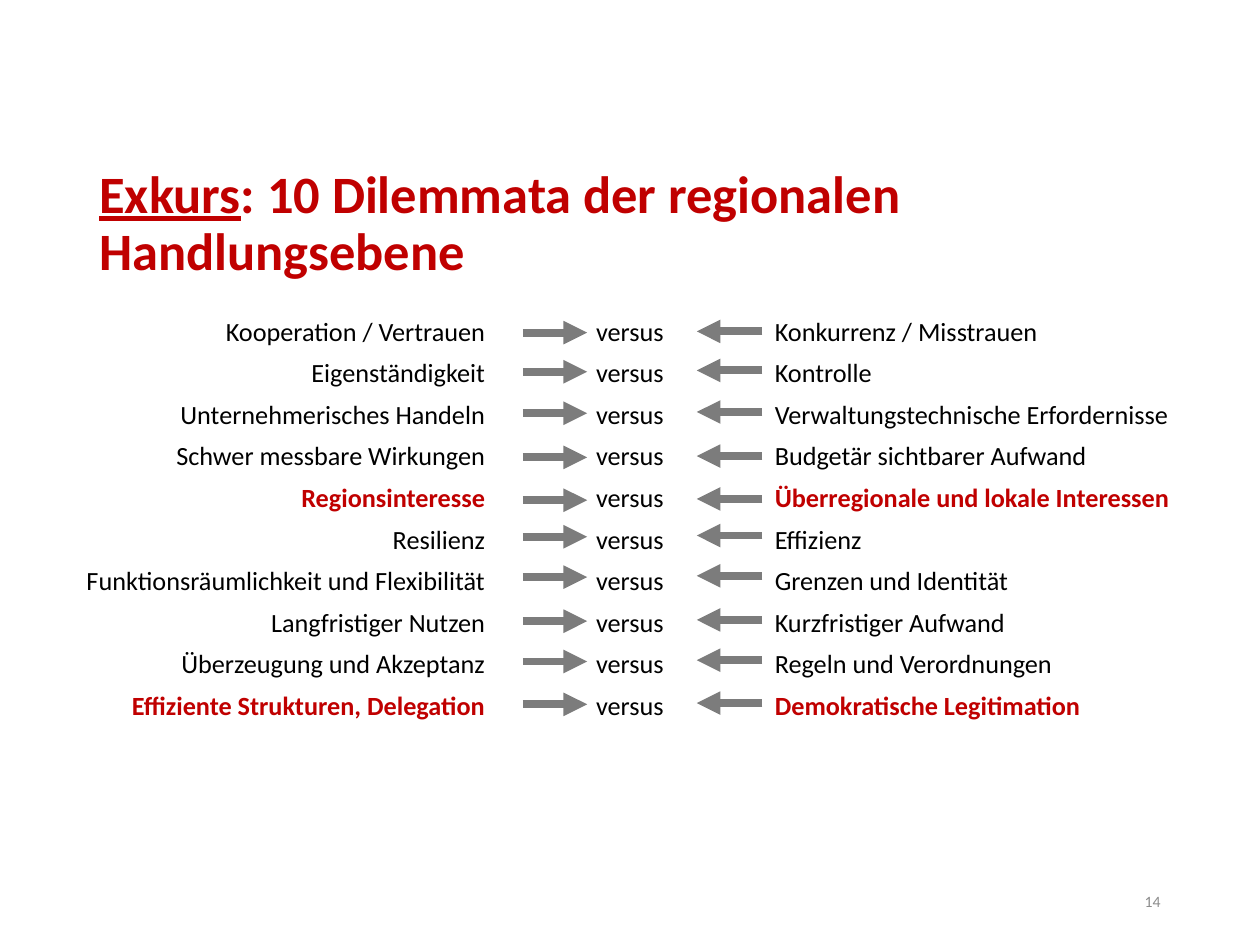
from pptx import Presentation
from pptx.dml.color import RGBColor
from pptx.enum.shapes import MSO_CONNECTOR as Connector
from pptx.enum.text import MSO_ANCHOR as Anchor, PP_ALIGN as Align
from pptx.oxml.ns import qn
from pptx.util import Inches, Pt
from lxml.etree import SubElement

RED = RGBColor(0xC0, 0x00, 0x00)
BLACK = RGBColor(0x00, 0x00, 0x00)
ARROW_GREY = RGBColor(0x7C, 0x7C, 0x7C)
NUMBER_GREY = RGBColor(0x8C, 0x8C, 0x8C)

# Left pole, right pole, emphasised, height of the arrow pair
DILEMMAS = [
    ("Kooperation / Vertrauen", "Konkurrenz / Misstrauen", False, 2.64),
    ("Eigenständigkeit", "Kontrolle", False, 2.95),
    ("Unternehmerisches Handeln", "Verwaltungstechnische Erfordernisse", False, 3.28),
    ("Schwer messbare Wirkungen", "Budgetär sichtbarer Aufwand", False, 3.63),
    ("Regionsinteresse", "Überregionale und lokale Interessen", True, 3.97),
    ("Resilienz", "Effizienz", False, 4.26),
    ("Funktionsräumlichkeit und Flexibilität", "Grenzen und Identität", False, 4.58),
    ("Langfristiger Nutzen", "Kurzfristiger Aufwand", False, 4.93),
    ("Überzeugung und Akzeptanz", "Regeln und Verordnungen", False, 5.25),
    ("Effiziente Strukturen, Delegation", "Demokratische Legitimation", True, 5.59),
]


def apply(target, values):
    for name, value in values.items():
        setattr(target, name, value)


class SlideBuilder:
    font_name = "Calibri"

    def __init__(self, page):
        self.page = page

    def span(self, para, text, color, **font):
        span = para.add_run()
        span.text = text
        apply(span.font, {"name": self.font_name, **font})
        span.font.color.rgb = color

    def text(self, left, top, width, height, spans, color, size, **para_format):
        box = self.page.shapes.add_textbox(*map(Inches, (left, top, width, height)))
        apply(box.text_frame, {"word_wrap": True, "vertical_anchor": Anchor.MIDDLE})
        para = box.text_frame.paragraphs[0]
        apply(para, para_format)
        for text, font in spans:
            self.span(para, text, color, size=Pt(size), **font)

    def table(self, left, top, column_widths, row_height, rows):
        frame = self.page.shapes.add_table(
            len(rows), len(column_widths), Inches(left), Inches(top),
            Inches(sum(column_widths)), Inches(row_height * len(rows)))
        table = frame.table
        apply(table, {"first_row": False, "horz_banding": False})
        for column, width in zip(table.columns, column_widths):
            column.width = Inches(width)
        for row, entries in zip(table.rows, rows):
            row.height = Inches(row_height)
            for cell, (text, align, strong) in zip(row.cells, entries):
                self.cell(cell, text, align, strong)

    def cell(self, cell, text, align, strong):
        cell.fill.background()
        apply(cell, {"margin_left": Inches(0.07), "margin_right": Inches(0.07),
                     "margin_top": Inches(0.04), "margin_bottom": Inches(0.04)})
        para = cell.text_frame.paragraphs[0]
        para.alignment = align
        self.span(para, text, RED if strong else BLACK, size=Pt(15), bold=strong)

    def arrow(self, start, end, y):
        arrow = self.page.shapes.add_connector(
            Connector.STRAIGHT, Inches(start), Inches(y), Inches(end), Inches(y))
        arrow.line.width = Pt(4.5)
        arrow.line.color.rgb = ARROW_GREY
        properties = arrow.element.spPr
        SubElement(properties.find(qn("a:ln")), qn("a:tailEnd"), type="triangle")
        SubElement(properties, qn("a:effectLst"))


def main():
    deck = Presentation()
    apply(deck, {"slide_width": Inches(10), "slide_height": Inches(7.5)})
    slide = SlideBuilder(deck.slides.add_slide(deck.slide_layouts[6]))

    # Title and page number
    slide.text(0.69, 1.24, 9.31, 1.09,
               [("Exkurs", {"bold": True, "underline": True}),
                (": 10 Dilemmata der regionalen Handlungsebene", {"bold": True})],
               RED, 30, line_spacing=0.9)
    slide.text(7.06, 6.95, 2.25, 0.4, [("14", {})], NUMBER_GREY, 9,
               alignment=Align.RIGHT)

    # Opposing poles
    slide.table(0.2, 2.47, [3.72, 2.16, 3.81], 0.33, [
        [(left, Align.RIGHT, strong), ("versus", Align.CENTER, False),
         (right, Align.LEFT, strong)]
        for left, right, strong, _ in DILEMMAS])

    # Arrows pointing at each "versus"
    for *_, y in DILEMMAS:
        slide.arrow(4.15, 4.66, y)
        slide.arrow(6.05, 5.53, y - 0.01)

    deck.save("out.pptx")


if __name__ == "__main__":
    main()
